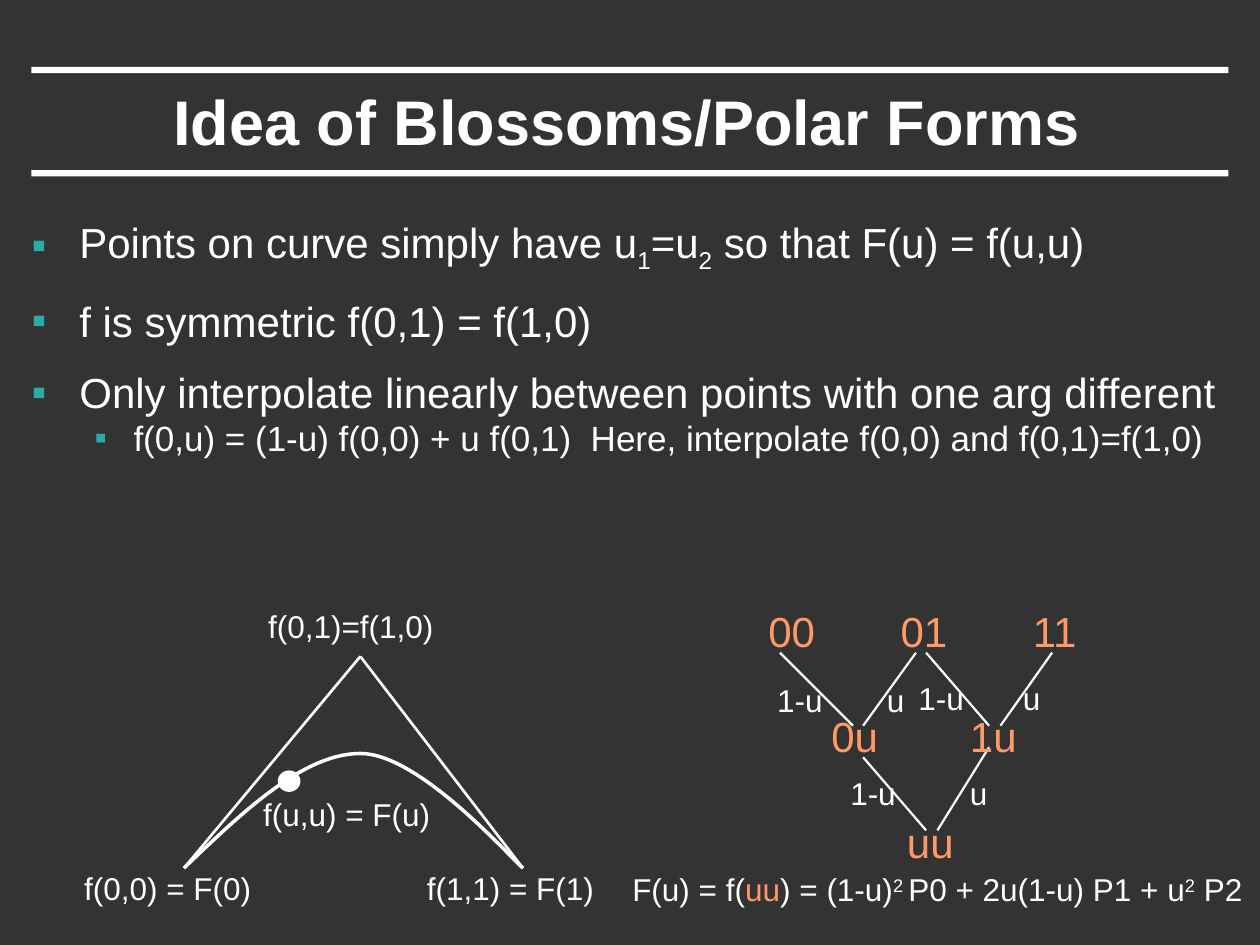
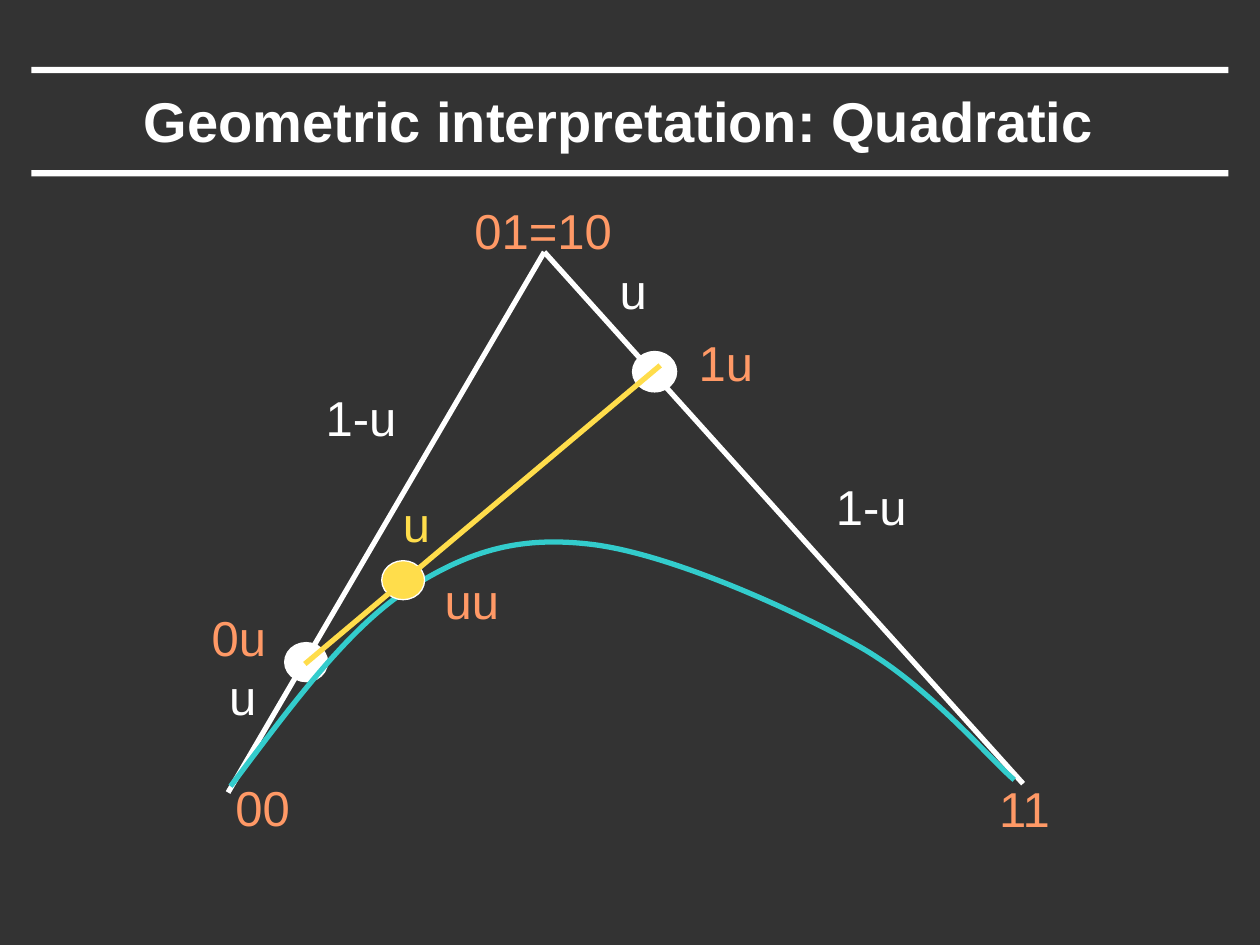
from dataclasses import dataclass
from typing import NamedTuple

import lxml.etree
import pptx
import pptx.dml.color
import pptx.enum.shapes
import pptx.enum.text
import pptx.oxml.ns
import pptx.util

Inches = pptx.util.Inches
Point = tuple[float, float]

FONT = "Arial"
BACKGROUND = "333333"
WHITE = "FFFFFF"
ORANGE = "FF9966"
YELLOW = "FFDD4B"
TURQUOISE = "33CCCC"
BULLET_COLOR = "2AABA8"
BAND_TOPS = (0.53, 1.35)


class Run(NamedTuple):
    text: str
    baseline: int = 0
    color: str = ""


@dataclass(frozen=True)
class Label:
    runs: tuple[Run, ...]
    left: float
    top: float
    width: float
    size: int = 18
    color: str = WHITE
    centered: bool = False


@dataclass(frozen=True)
class Line:
    start: Point
    end: Point
    width: float
    color: str = WHITE


@dataclass(frozen=True)
class Dot:
    left: float
    top: float
    width: float
    height: float
    color: str = WHITE


@dataclass(frozen=True)
class Curve:
    points: tuple[Point, ...]
    width: float
    color: str = WHITE


@dataclass(frozen=True)
class Bullet:
    runs: tuple[Run, ...]
    level: int = 0


class BulletStyle(NamedTuple):
    size: int
    margin: float
    indent: float
    space_before: int


BULLET_STYLES = (BulletStyle(24, 0.38, -0.38, 50), BulletStyle(20, 0.81, -0.31, 0))


def rgb(color: str) -> pptx.dml.color.RGBColor:
    return pptx.dml.color.RGBColor.from_string(color)


def add_xml(parent, tag: str, **attributes: str):
    return lxml.etree.SubElement(parent, pptx.oxml.ns.qn(tag), attributes)


def write_runs(paragraph, runs: tuple[Run, ...], size: int, color: str = WHITE, bold: bool = False) -> None:
    paragraph.font.name = FONT
    paragraph.font.size = pptx.util.Pt(size)
    paragraph.font.bold = bold
    paragraph.font.color.rgb = rgb(color)
    for item in runs:
        run = paragraph.add_run()
        run.text = item.text
        if item.baseline:
            run._r.get_or_add_rPr().set("baseline", str(item.baseline * 1000))
        if item.color:
            run.font.color.rgb = rgb(item.color)


def place(shape, left: float, top: float, width: float, height: float) -> None:
    shape.left, shape.top = Inches(left), Inches(top)
    shape.width, shape.height = Inches(width), Inches(height)


def style_line(line, color: str, width: float) -> None:
    line.color.rgb = rgb(color)
    line.width = pptx.util.Pt(width)


def add_label(shapes, label: Label) -> None:
    height = {18: 0.4, 24: 0.5, 28: 0.57}[label.size]
    box = shapes.add_textbox(Inches(label.left), Inches(label.top), Inches(label.width), Inches(height))
    frame = box.text_frame
    frame.word_wrap = label.centered
    frame.auto_size = pptx.enum.text.MSO_AUTO_SIZE.SHAPE_TO_FIT_TEXT
    paragraph = frame.paragraphs[0]
    if label.centered:
        paragraph.alignment = pptx.enum.text.PP_ALIGN.CENTER
    write_runs(paragraph, label.runs, label.size, label.color)


def add_line(shapes, line: Line) -> None:
    ends = [Inches(value) for value in (*line.start, *line.end)]
    connector = shapes.add_connector(pptx.enum.shapes.MSO_CONNECTOR.STRAIGHT, *ends)
    style_line(connector.line, line.color, line.width)
    add_xml(connector._element.spPr, "a:effectLst")


def add_dot(shapes, dot: Dot) -> None:
    shape = shapes.add_shape(
        pptx.enum.shapes.MSO_SHAPE.OVAL, Inches(dot.left), Inches(dot.top), Inches(dot.width), Inches(dot.height)
    )
    shape.shadow.inherit = False
    shape.fill.solid()
    shape.fill.fore_color.rgb = rgb(dot.color)
    style_line(shape.line, WHITE, 0.75)


def add_curve(shapes, curve: Curve) -> None:
    points = [(Inches(x), Inches(y)) for x, y in curve.points]
    builder = shapes.build_freeform(*points[0])
    builder.add_line_segments(points[1:], close=False)
    shape = builder.convert_to_shape()
    shape.shadow.inherit = False
    shape.fill.background()
    style_line(shape.line, curve.color, curve.width)
    segments = list(shape._element.iter(pptx.oxml.ns.qn("a:lnTo")))
    outline = segments[0].getparent()
    for index in range(0, len(segments), 3):
        bezier = add_xml(outline, "a:cubicBezTo")
        for segment in segments[index:index + 3]:
            bezier.append(segment[0])
            outline.remove(segment)


def draw(shapes, items: list[Label | Line | Dot | Curve]) -> None:
    painters = {Label: add_label, Line: add_line, Dot: add_dot, Curve: add_curve}
    for item in items:
        painters[type(item)](shapes, item)


def add_titled_slide(presentation, layout_index: int, title: str, size: int):
    slide = presentation.slides.add_slide(presentation.slide_layouts[layout_index])
    for top in BAND_TOPS:
        band = slide.shapes.add_shape(
            pptx.enum.shapes.MSO_SHAPE.RECTANGLE, Inches(0.25), Inches(top), Inches(9.5), Inches(0.05)
        )
        band.shadow.inherit = False
        band.fill.solid()
        band.fill.fore_color.rgb = rgb(WHITE)
        band.line.fill.background()
    heading = slide.shapes.title
    place(heading, 0.74, 0.58, 8.47, 0.75)
    frame = heading.text_frame
    frame.auto_size = pptx.enum.text.MSO_AUTO_SIZE.NONE
    frame.vertical_anchor = pptx.enum.text.MSO_ANCHOR.MIDDLE
    paragraph = frame.paragraphs[0]
    paragraph.alignment = pptx.enum.text.PP_ALIGN.CENTER
    write_runs(paragraph, (Run(title),), size, bold=True)
    return slide


def fill_body(body, bullets: list[Bullet]) -> None:
    place(body, 0.15, 1.67, 9.85, 5.5)
    frame = body.text_frame
    frame.auto_size = pptx.enum.text.MSO_AUTO_SIZE.NONE
    for index, bullet in enumerate(bullets):
        paragraph = frame.add_paragraph() if index else frame.paragraphs[0]
        paragraph.level = bullet.level
        style = BULLET_STYLES[bullet.level]
        properties = paragraph._p.get_or_add_pPr()
        properties.set("marL", str(Inches(style.margin)))
        properties.set("indent", str(Inches(style.indent)))
        add_xml(add_xml(properties, "a:spcBef"), "a:spcPct", val=str(style.space_before * 1000))
        add_xml(add_xml(properties, "a:buClr"), "a:srgbClr", val=BULLET_COLOR)
        add_xml(properties, "a:buFont", typeface=FONT)
        add_xml(properties, "a:buChar", char="▪")
        write_runs(paragraph, bullet.runs, style.size)


def build_blossom_slide(presentation) -> None:
    slide = add_titled_slide(presentation, 1, "Idea of Blossoms/Polar Forms", 36)
    fill_body(slide.placeholders[1], [
        Bullet((Run("Points on curve simply have u"), Run("1", -25), Run("=u"), Run("2", -25),
                Run(" so that F(u) = f(u,u)"))),
        Bullet((Run("f is symmetric f(0,1) = f(1,0)"),)),
        Bullet((Run("Only interpolate linearly between points with one arg different"),)),
        Bullet((Run("f(0,u) = (1-u) f(0,0) + u f(0,1)  Here, interpolate f(0,0) and f(0,1)=f(1,0)"),), 1),
    ])

    branches = [
        ((6.19, 5.18), (6.77, 5.76)), ((7.27, 5.18), (6.85, 5.76)),
        ((7.35, 5.18), (7.85, 5.76)), ((8.35, 5.18), (7.94, 5.76)),
        ((6.85, 6.01), (7.35, 6.59)), ((7.85, 5.93), (7.44, 6.59)),
    ]
    weights = [
        ("1-u", 6.07, 5.36), ("1-u", 7.19, 5.34), ("u", 6.94, 5.36),
        ("u", 8.02, 5.34), ("1-u", 6.65, 6.09), ("u", 7.6, 6.09),
    ]
    nodes = [(text, 6 + 1.05 * column, 4.76) for column, text in enumerate(("00", "01", "11"))]
    nodes += [("0u", 6.5, 5.59), ("1u", 7.6, 5.59), ("uu", 7.1, 6.43)]
    formula = (
        Run("F(u) = f("), Run("uu", color=ORANGE), Run(") = (1-u)"), Run("2 ", 30),
        Run("P0 + 2u(1-u) P1 + u"), Run("2", 30), Run(" P2"),
    )
    draw(slide.shapes, [
        *(Line(start, end, 1.25) for start, end in branches),
        Label(formula, 4.92, 6.86, 5.07),
        *(Label((Run(text),), left, top, 0.34 if text == "u" else 0.56) for text, left, top in weights),
        *(Label((Run(text),), left, top, 0.57, 24, ORANGE) for text, left, top in nodes),
    ])

    first, apex, last = (1.46, 6.89), (2.86, 5.21), (4.15, 6.89)
    curve_points = (first, (1.93, 6.44), (2.41, 5.98), (2.86, 5.98), (3.31, 5.98), (3.99, 6.74), last)
    captions = [
        ("f(0,0) = F(0)", 0.57, 6.85), ("f(1,1) = F(1)", 3.29, 6.85),
        ("f(0,1)=f(1,0)", 2.03, 4.77), ("f(u,u) = F(u)", 1.99, 6.26),
    ]
    draw(slide.shapes.add_group_shape().shapes, [
        Line(first, apex, 1.5),
        Line(apex, last, 1.5),
        Curve(curve_points, 2),
        Dot(2.21, 6.12, 0.17, 0.16),
        *(Label((Run(text),), left, top, 1.53) for text, left, top in captions),
    ])


def build_quadratic_slide(presentation) -> None:
    slide = add_titled_slide(presentation, 5, "Geometric interpretation: Quadratic ", 32)
    apex = (4.32, 2)
    curve_points = (
        (1.83, 6.24), (2.29, 5.63), (2.74, 5.01), (3.22, 4.69), (3.7, 4.38), (4.1, 4.25), (4.69, 4.32),
        (5.29, 4.39), (6.24, 4.81), (6.8, 5.12), (7.36, 5.43), (7.84, 6.01), (8.05, 6.19),
    )
    labels = [
        ("u", 3.1, 3.87, 0.4, YELLOW), ("u", 1.72, 5.24, 0.4, WHITE), ("u", 4.82, 2.02, 0.4, WHITE),
        ("1-u", 2.47, 3.03, 0.79, WHITE), ("1-u", 6.52, 3.73, 0.79, WHITE),
        ("00", 1.56, 6.12, 1.05, ORANGE), ("01=10", 3.55, 1.54, 1.52, ORANGE),
        ("11", 7.37, 6.13, 1.52, ORANGE), ("0u", 1.42, 4.77, 0.95, ORANGE),
        ("1u", 5.3, 2.59, 0.92, ORANGE), ("uu", 3.26, 4.48, 0.97, ORANGE),
    ]
    draw(slide.shapes, [
        Line((1.81, 6.29), apex, 3),
        Line(apex, (8.12, 6.22), 3),
        Dot(2.26, 5.1, 0.34, 0.31),
        Curve(curve_points, 3, TURQUOISE),
        Dot(3.03, 4.45, 0.34, 0.31, YELLOW),
        Dot(5.02, 2.79, 0.35, 0.32),
        Line((2.42, 5.27), (5.24, 2.9), 3, YELLOW),
        *(Label((Run(text),), left, top, width, 28, color, True) for text, left, top, width, color in labels),
    ])


def main() -> None:
    presentation = pptx.Presentation()
    presentation.slide_width, presentation.slide_height = Inches(10), Inches(7.5)
    background = presentation.slide_master.background.fill
    background.solid()
    background.fore_color.rgb = rgb(BACKGROUND)
    build_blossom_slide(presentation)
    build_quadratic_slide(presentation)
    presentation.save("out.pptx")


if __name__ == "__main__":
    main()
